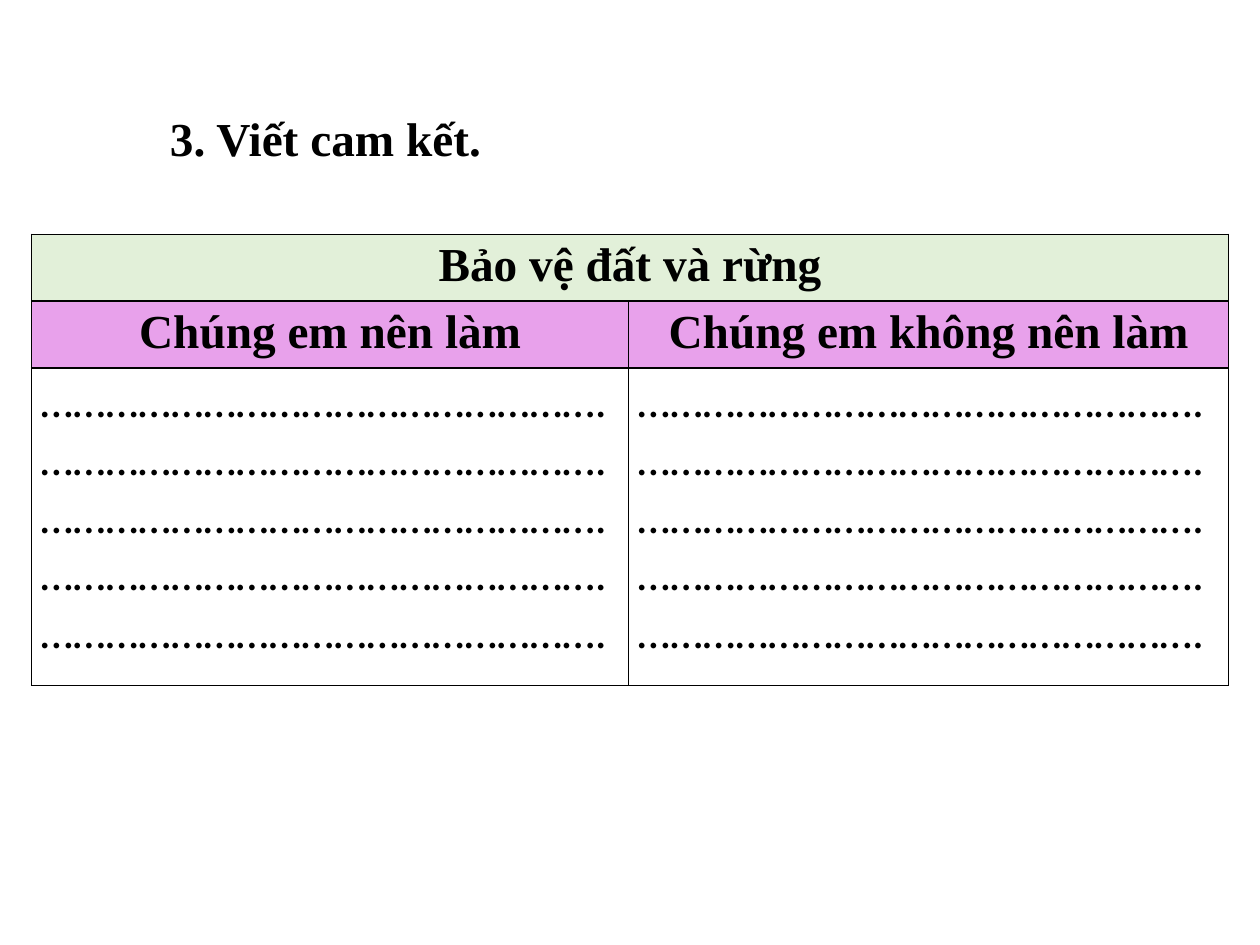
from lxml.etree import SubElement
from pptx import Presentation
from pptx.dml.color import RGBColor
from pptx.enum.text import MSO_AUTO_SIZE as AutoSize, PP_ALIGN as Align
from pptx.oxml.ns import qn
from pptx.util import Inches, Pt

BLACK = RGBColor(0x00, 0x00, 0x00)
GREEN = RGBColor(0xE2, 0xF0, 0xD9)
PINK = RGBColor(0xE8, 0xA1, 0xEB)

COLUMN_WIDTHS = [4.74, 4.76]
ROW_HEIGHTS = [0.53, 0.53, 2.52]
WRITING_LINES = ["……………………………………………."] * 5


def write(frame, lines, font="Times New Roman", bold=True, align=Align.LEFT):
    for index, line in enumerate(lines):
        paragraph = frame.add_paragraph() if index else frame.paragraphs[0]
        paragraph.alignment = align
        run = paragraph.add_run()
        run.text = line
        run.font.name = font
        run.font.size = Pt(27)
        run.font.bold = bold
        run.font.color.rgb = BLACK


def add_borders(cell):
    properties = cell._tc.get_or_add_tcPr()
    for position, side in enumerate(("lnL", "lnR", "lnT", "lnB")):
        line = SubElement(properties, qn(f"a:{side}"), w=str(Pt(1)))
        fill = SubElement(line, qn("a:solidFill"))
        SubElement(fill, qn("a:srgbClr"), val=str(BLACK))
        properties.insert(position, line)


presentation = Presentation()
presentation.slide_width = Inches(10)
presentation.slide_height = Inches(7.5)
slide = presentation.slides.add_slide(presentation.slide_layouts[6])

heading = slide.shapes.add_textbox(Inches(1.25), Inches(0.82), Inches(2.69), Inches(0.56))
heading.text_frame.word_wrap = False
heading.text_frame.auto_size = AutoSize.SHAPE_TO_FIT_TEXT
write(heading.text_frame, ["3. Viết cam kết."])

table = slide.shapes.add_table(
    len(ROW_HEIGHTS), len(COLUMN_WIDTHS), Inches(0.25), Inches(1.86),
    Inches(sum(COLUMN_WIDTHS)), Inches(sum(ROW_HEIGHTS)),
).table
table.first_row = False
table.horz_banding = False
for column, width in zip(table.columns, COLUMN_WIDTHS):
    column.width = Inches(width)
for row, height in zip(table.rows, ROW_HEIGHTS):
    row.height = Inches(height)
table.cell(0, 0).merge(table.cell(0, 1))

for row, color in zip(table.rows, (GREEN, PINK, None)):
    for cell in row.cells:
        cell.margin_left = cell.margin_right = Inches(0.07)
        cell.margin_top = cell.margin_bottom = Inches(0.04)
        if color is None:
            cell.fill.background()
            write(cell.text_frame, WRITING_LINES, font="Calibri", bold=False)
        else:
            cell.fill.solid()
            cell.fill.fore_color.rgb = color
        add_borders(cell)

titles = {
    (0, 0): "Bảo vệ đất và rừng",
    (1, 0): "Chúng em nên làm",
    (1, 1): "Chúng em không nên làm",
}
for position, title in titles.items():
    write(table.cell(*position).text_frame, [title], align=Align.CENTER)

presentation.save("out.pptx")
